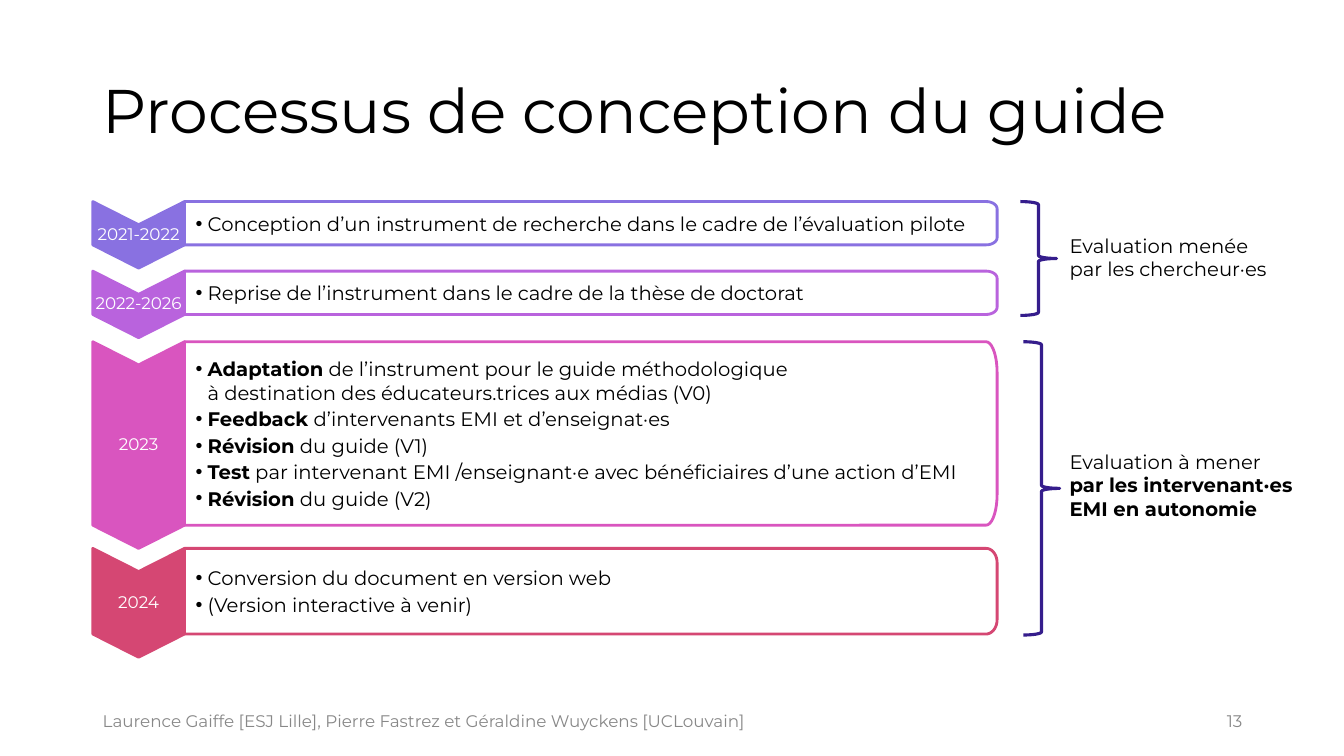
import math
from lxml import etree
from pptx import Presentation
from pptx import util as u
from pptx.dml.color import RGBColor
from pptx.enum import shapes, text
from pptx.oxml.ns import qn

LEFT, CENTER, RIGHT = text.PP_ALIGN.LEFT, text.PP_ALIGN.CENTER, text.PP_ALIGN.RIGHT
MIDDLE, TOP = text.MSO_ANCHOR.MIDDLE, text.MSO_ANCHOR.TOP
BLACK, WHITE, GREY, INDIGO = "000000", "FFFFFF", "888888", "351D8C"


def rgb(code):
    return RGBColor.from_string(code)


def write(shape, paragraphs, size, color=BLACK, align=LEFT, anchor=MIDDLE,
          insets=(0.1, 0.05, 0.1, 0.05), spacing=1.0, bullet=False):
    """Each paragraph is a list of runs: *bold* in asterisks, "\n" for a line break."""
    frame = shape.text_frame
    frame.word_wrap, frame.vertical_anchor = True, anchor
    for side, inset in zip(("left", "top", "right", "bottom"), insets):
        setattr(frame, f"margin_{side}", u.Inches(inset))
    for i, runs in enumerate(paragraphs):
        par = frame.add_paragraph() if i else frame.paragraphs[0]
        if bullet:
            props = par._p.get_or_add_pPr()
            props.set("marL", str(u.Inches(0.12)))
            props.set("indent", str(-u.Inches(0.12)))
            etree.SubElement(props, qn("a:buFont"), typeface="Arial")
            etree.SubElement(props, qn("a:buChar"), char="•")
            par.space_after = u.Pt(2.1)
        par.alignment, par.line_spacing = align, spacing
        for words in runs:
            if words == "\n":
                par.add_line_break()
                continue
            run = par.add_run()
            run.text = words.strip("*")
            style = {"name": "Montserrat", "size": u.Pt(size), "bold": words.startswith("*")}
            for key, value in style.items():
                setattr(run.font, key, value)
            run.font.color.rgb = rgb(color)


deck = Presentation()
deck.slide_width, deck.slide_height = u.Inches(13.33), u.Inches(7.5)
slide = deck.slides.add_slide(deck.slide_layouts[5])

# Title
title = slide.shapes.title
title.left, title.top, title.width, title.height = map(u.Inches, (0.92, 0.4, 11.5, 1.45))
write(title, [["Processus de conception du guide"]], 44, spacing=0.9)

# Stages: period, colour, top, height of the step box, steps
stages = [
    ("2021-2022", "8971E1", 2.0, 0.43,
     [["Conception d’un instrument de recherche dans le cadre de l’évaluation pilote"]]),
    ("2022-2026", "B963DD", 2.69, 0.43,
     [["Reprise de l’instrument dans le cadre de la thèse de doctorat"]]),
    ("2023", "D955BF", 3.39, 1.82,
     [["*Adaptation*", " de l’instrument pour le guide méthodologique", "\n",
       "à destination des éducateurs.trices aux médias (V0)"],
      ["*Feedback*", " d’intervenants EMI et d’enseignat·es"],
      ["*Révision*", " du guide (V1)"],
      ["*Test*", " par intervenant EMI /enseignant·e avec bénéficiaires d’une action d’EMI"],
      ["*Révision*", " du guide (V2)"]]),
    ("2024", "D54773", 5.44, 0.85,
     [["Conversion du document en version web"], ["(Version interactive à venir)"]]),
]
chevron_left, box_left, box_right = 0.92, 1.83, 9.89
chevron_mid = (chevron_left + box_left) / 2
notch, corner = 0.23, 0.11
quarter = [math.radians(angle) for angle in range(0, 91, 10)]

for period, color, top, height, steps in stages:
    bottom, rise = top + height, height / 6
    chevron_outline = [(box_left, top), (box_left, bottom), (chevron_mid, bottom + notch),
                       (chevron_left, bottom), (chevron_left, top), (chevron_mid, top + notch)]
    upper_corner = [(box_right - corner + corner * math.sin(a), top + rise - rise * math.cos(a))
                    for a in quarter]
    lower_corner = [(x, top + bottom - y) for x, y in reversed(upper_corner)]
    box_outline = [(box_left, top), *upper_corner, *lower_corner, (box_left, bottom)]

    parts = []
    for outline, fill in ((chevron_outline, color), (box_outline, WHITE)):
        points = [(u.Inches(x), u.Inches(y)) for x, y in outline]
        builder = slide.shapes.build_freeform(*points[0])
        builder.add_line_segments(points[1:], close=True)
        part = builder.convert_to_shape()
        part.shadow.inherit = False
        part.fill.solid()
        part.fill.fore_color.rgb = rgb(fill)
        part.line.color.rgb = rgb(color)
        part.line.width = u.Pt(2)
        parts.append(part)
    chevron, box = parts
    write(chevron, [[period]], 12, WHITE, CENTER, insets=(0.01, 0, 0.01, 0), spacing=0.9)
    write(box, steps, 14, insets=(0.11, 0.05, 0.05, 0.05), bullet=True)

# Braces over the two phases of evaluation
for left, top, height in ((10.12, 2.0, 1.13), (10.15, 3.39, 2.91)):
    brace = slide.shapes.add_shape(shapes.MSO_SHAPE.RIGHT_BRACE,
                                   *map(u.Inches, (left, top, 0.36, height)))
    brace.shadow.inherit = False
    brace.fill.background()
    brace.line.color.rgb = rgb(INDIGO)
    brace.line.width = u.Pt(2.25)

# Phase captions, footer and page number
captions = [
    ((10.51, 2.27, 2.31, 0.57), ["Evaluation menée par les chercheur·es"], 14, BLACK, LEFT, TOP),
    ((10.51, 4.41, 2.43, 0.81),
     ["Evaluation à mener ", "*par les intervenant·es EMI en autonomie*"], 14, BLACK, LEFT, TOP),
    ((0.92, 6.95, 8.34, 0.4),
     ["Laurence Gaiffe [ESJ Lille], Pierre Fastrez et Géraldine Wuyckens [UCLouvain]"],
     12, GREY, LEFT, MIDDLE),
    ((9.42, 6.95, 3.0, 0.4), ["13"], 12, GREY, RIGHT, MIDDLE),
]
for place, runs, size, color, align, anchor in captions:
    caption = slide.shapes.add_textbox(*map(u.Inches, place))
    write(caption, [runs], size, color, align, anchor)

deck.save("out.pptx")
